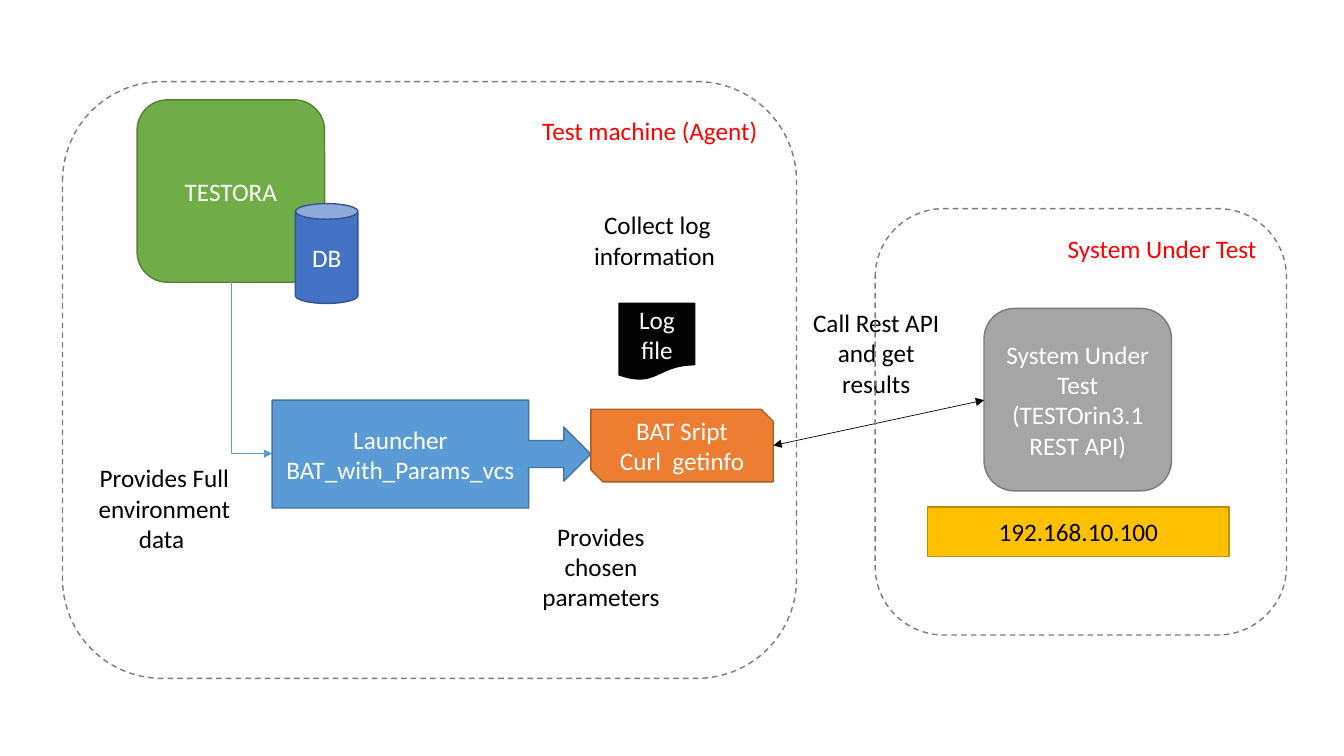
"""Build a slide showing how a test machine drives a system under test."""
from dataclasses import dataclass
from typing import Optional

from lxml import etree
from pptx import Presentation, util as u
from pptx.dml.color import RGBColor
from pptx.enum import dml, shapes, text
from pptx.oxml import ns

SHAPE = shapes.MSO_SHAPE
LINK = shapes.MSO_CONNECTOR


@dataclass
class Block:
    kind: shapes.MSO_SHAPE
    box: tuple[float, float, float, float]
    lines: tuple[str, ...]
    fill: Optional[str]
    line: Optional[str]
    color: str = "FFFFFF"
    frame: bool = False


@dataclass
class Link:
    kind: shapes.MSO_CONNECTOR
    start: tuple[float, float]
    end: tuple[float, float]
    color: str
    ends: tuple[str, ...]


def note(left: float, top: float, *lines: str) -> Block:
    """Describe a white caption of the common size."""
    return Block(SHAPE.RECTANGLE, (left, top, 1.58, 0.98), lines, "FFFFFF", None, "000000")


def frame(box: tuple[float, float, float, float], title: str) -> Block:
    """Describe a dashed frame with a red title."""
    return Block(SHAPE.ROUNDED_RECTANGLE, box, (title,), None, "7A7A7A", "FF0000", True)


def rgb(value: str) -> RGBColor:
    """Turn a hex string into a colour."""
    return RGBColor.from_string(value)


def add_block(slide, block: Block):
    """Draw one block with its text."""
    s = slide.shapes.add_shape(block.kind, *map(u.Inches, block.box))
    s.shadow.inherit = False
    if block.fill:
        s.fill.solid()
        s.fill.fore_color.rgb = rgb(block.fill)
    else:
        s.fill.background()
    if block.line:
        s.line.color.rgb = rgb(block.line)
        s.line.width = u.Pt(1)
    else:
        s.line.fill.background()
    if block.frame:
        s.line.dash_style = dml.MSO_LINE.DASH
    tf = s.text_frame
    tf.word_wrap = True
    tf.vertical_anchor = text.MSO_ANCHOR.TOP if block.frame else text.MSO_ANCHOR.MIDDLE
    for i, line in enumerate(block.lines):
        p = tf.add_paragraph() if i else tf.paragraphs[0]
        p.alignment = text.PP_ALIGN.RIGHT if block.frame else text.PP_ALIGN.CENTER
        r = p.add_run()
        r.text = line
        r.font.name = "Calibri"
        r.font.size = u.Pt(18)
        r.font.color.rgb = rgb(block.color)
    return s


def add_link(slide, link: Link):
    """Draw one thin connector with triangle arrowheads."""
    s = slide.shapes.add_connector(link.kind, *map(u.Inches, link.start + link.end))
    s.line.color.rgb = rgb(link.color)
    s.line.width = u.Pt(0.5)
    sp = s._element.spPr
    for end in link.ends:
        etree.SubElement(sp.find(ns.qn("a:ln")), ns.qn(f"a:{end}"), type="triangle")
    etree.SubElement(sp, ns.qn("a:effectLst"))
    return s


def turn_once(connector) -> None:
    """Make an elbow connector run down, then right, with a single bend."""
    sp = connector._element.spPr
    sp.find(ns.qn("a:xfrm")).set("rot", str(270 * 60000))
    sp.find(ns.qn("a:prstGeom")).set("prst", "bentConnector2")


STUDIO = Block(SHAPE.ROUNDED_RECTANGLE, (1.36, 0.99, 1.86, 1.81), ("TESTORA",), "70AD47", "538035")
SYSTEM = Block(SHAPE.ROUNDED_RECTANGLE, (9.76, 3.06, 1.86, 1.81),
               ("System Under Test", "(TESTOrin3.1 REST API)"), "A5A5A5", "7A7A7A")
ADDRESS = Block(SHAPE.RECTANGLE, (9.2, 5.03, 2.99, 0.49), ("192.168.10.100",),
                "FFC000", "BD8E00", "000000")
LAUNCHER = Block(SHAPE.RIGHT_ARROW_CALLOUT, (2.7, 3.97, 3.16, 1.07),
                 ("Launcher", "BAT_with_Params_vcs"), "5B9BD5", "43739E")
SCRIPT = Block(SHAPE.SNIP_2_DIAG_RECTANGLE, (5.86, 4.06, 1.81, 0.72),
               ("BAT Sript", "Curl  getinfo"), "ED7D31", "AF5C24")
LOG = Block(SHAPE.FLOWCHART_DOCUMENT, (6.14, 3.01, 0.75, 0.76), ("Log file",), "000000", "000000")
DATABASE = Block(SHAPE.CAN, (2.93, 2.02, 0.62, 0.99), ("DB",), "4472C4", "325491")
REST_CALL = Link(LINK.STRAIGHT, (7.67, 4.42), (9.76, 3.97), "000000", ("headEnd", "tailEnd"))
LAUNCH = Link(LINK.ELBOW, (3.35, 3.44), (1.64, 3.85), "5B9BD5", ("tailEnd",))
OVERLAYS = (
    note(0.84, 4.55, "Provides Full environment", "data "),
    note(5.17, 5.13, "Provides chosen parameters"),
    note(7.9, 3.01, "Call Rest API and get results"),
    note(5.73, 1.89, "Collect log information "),
    frame((8.68, 2.07, 4.08, 4.23), "System Under Test"),
    frame((0.62, 0.81, 7.28, 5.92), "Test machine (Agent)"),
    DATABASE,
)


def main() -> None:
    """Draw the slide from back to front and save it."""
    prs = Presentation()
    prs.slide_width, prs.slide_height = u.Inches(13.33), u.Inches(7.5)
    slide = prs.slides.add_slide(prs.slide_layouts[6])
    for block in (STUDIO, SYSTEM, ADDRESS):
        add_block(slide, block)
    launcher = add_block(slide, LAUNCHER)
    launcher.adjustments[3] = 0.805
    add_block(slide, SCRIPT)
    add_link(slide, REST_CALL)
    add_block(slide, LOG)
    turn_once(add_link(slide, LAUNCH))
    for block in OVERLAYS:
        add_block(slide, block)
    prs.save("out.pptx")


if __name__ == "__main__":
    main()
